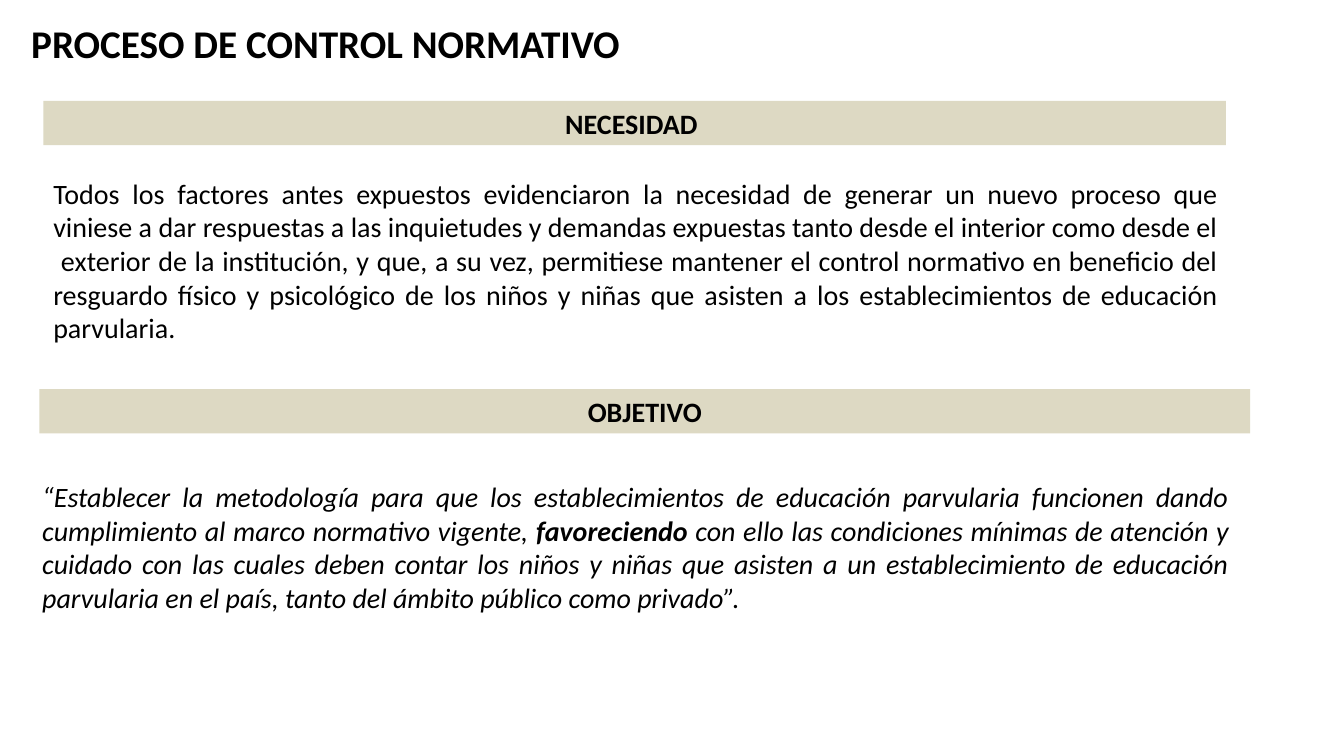
from dataclasses import dataclass

from pptx import Presentation
from pptx import util as u
from pptx.dml.color import RGBColor
from pptx.enum import shapes, text

PX = 9144  # EMU per px, 100 px to the inch
FONT = "Calibri"
BLACK = "000000"
BAND_FILL = "DDD9C3"


@dataclass(frozen=True)
class Box:
    left: int
    top: int
    width: int
    height: int

    def emu(self) -> tuple[int, ...]:
        return tuple(side * PX for side in (self.left, self.top, self.width, self.height))


@dataclass(frozen=True)
class Run:
    text: str
    bold: bool = False
    italic: bool = False


@dataclass(frozen=True)
class Section:
    heading: str
    band: Box
    body: Box
    runs: tuple[Run, ...]


TITLE = "PROCESO DE CONTROL NORMATIVO"
TITLE_BOX = Box(21, 14, 718, 57)

SECTIONS = (
    Section(
        "NECESIDAD ",
        Box(43, 100, 1173, 44),
        Box(43, 170, 1175, 178),
        (
            Run(
                "Todos los factores antes expuestos evidenciaron la necesidad de generar un "
                "nuevo proceso que viniese a dar respuestas a las inquietudes y demandas "
                "expuestas tanto desde el interior como desde el  exterior de la institución, "
                "y que, a su vez, permitiese mantener el control normativo en beneficio del "
                "resguardo físico y psicológico de los niños y niñas que asisten a los "
                "establecimientos de educación parvularia."
            ),
        ),
    ),
    Section(
        "OBJETIVO",
        Box(39, 386, 1201, 44),
        Box(32, 471, 1197, 145),
        (
            Run(
                "“Establecer la metodología para que los establecimientos de educación "
                "parvularia funcionen dando cumplimiento al marco normativo vigente, ",
                italic=True,
            ),
            Run("favoreciendo ", bold=True, italic=True),
            Run(
                "con ello las condiciones mínimas de atención y cuidado con las cuales deben "
                "contar los niños y niñas que asisten a un establecimiento de educación "
                "parvularia en el país, tanto del ámbito público como privado”. ",
                italic=True,
            ),
        ),
    ),
)


def color(value: str) -> RGBColor:
    return RGBColor.from_string(value)


def write(shape, runs: tuple[Run, ...], size: int, alignment, anchor=text.MSO_ANCHOR.TOP) -> None:
    frame = shape.text_frame
    frame.word_wrap = True
    frame.auto_size = text.MSO_AUTO_SIZE.SHAPE_TO_FIT_TEXT
    frame.vertical_anchor = anchor
    paragraph = frame.paragraphs[0]
    paragraph.alignment = alignment
    for item in runs:
        run = paragraph.add_run()
        run.text = item.text
        run.font.name = FONT
        run.font.size = u.Pt(size)
        run.font.bold = item.bold
        run.font.italic = item.italic
        run.font.color.rgb = color(BLACK)


def add_title(slide) -> None:
    title = slide.shapes.title
    title.left, title.top, title.width, title.height = TITLE_BOX.emu()
    write(title, (Run(TITLE, bold=True),), 28, text.PP_ALIGN.LEFT)


def add_section(slide, section: Section) -> None:
    band = slide.shapes.add_shape(shapes.MSO_SHAPE.RECTANGLE, *section.band.emu())
    band.shadow.inherit = False
    band.fill.solid()
    band.fill.fore_color.rgb = color(BAND_FILL)
    band.line.fill.background()
    write(band, (Run(section.heading, bold=True),), 20,
          text.PP_ALIGN.CENTER, text.MSO_ANCHOR.MIDDLE)

    body = slide.shapes.add_textbox(*section.body.emu())
    write(body, section.runs, 20, text.PP_ALIGN.JUSTIFY)


def main() -> None:
    presentation = Presentation()
    presentation.slide_width = 1333 * PX
    presentation.slide_height = 750 * PX
    slide = presentation.slides.add_slide(presentation.slide_layouts[5])
    add_title(slide)
    for section in SECTIONS:
        add_section(slide, section)
    presentation.save("out.pptx")


if __name__ == "__main__":
    main()
